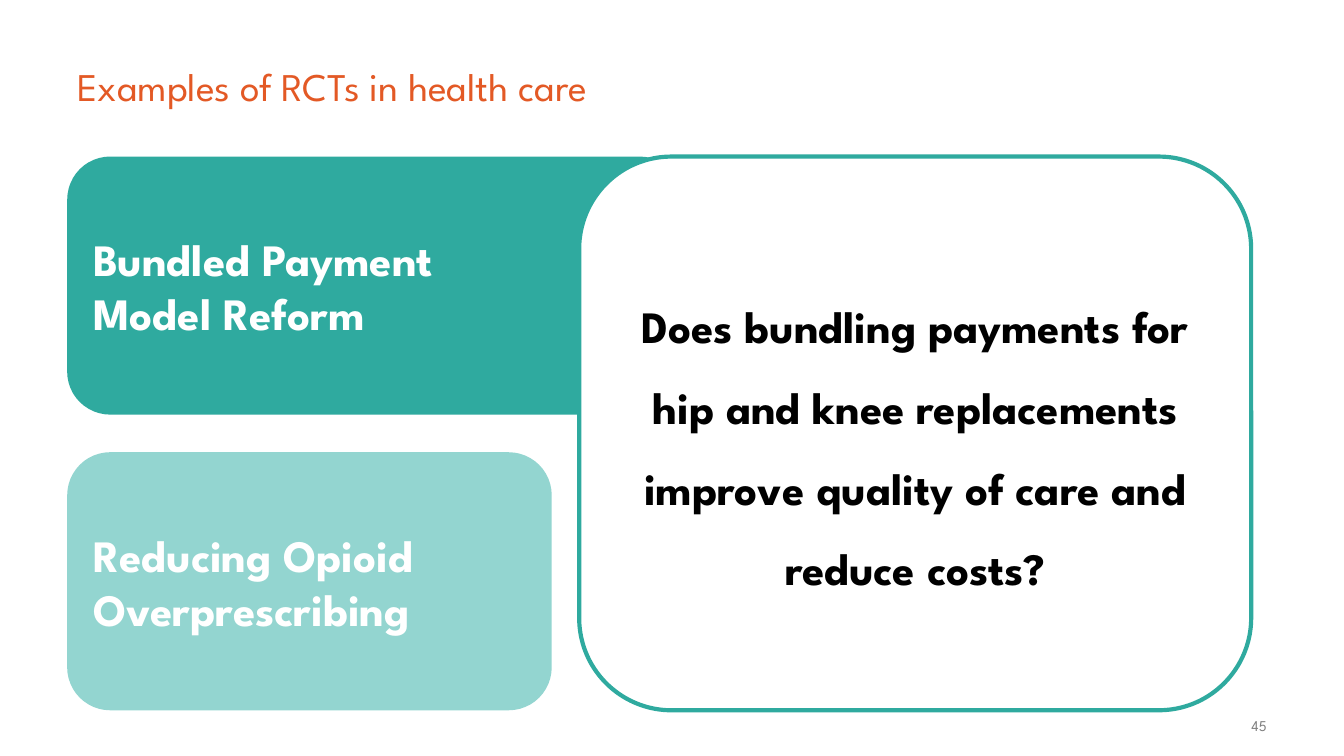
from dataclasses import dataclass

from pptx import Presentation
from pptx.dml.color import RGBColor
from pptx.enum.shapes import MSO_SHAPE
from pptx.enum.text import MSO_ANCHOR, PP_ALIGN
from pptx.shapes.base import BaseShape
from pptx.slide import Slide
from pptx.text.text import TextFrame
from pptx.util import Emu, Pt

EMU_PER_PX = 4572
FONT = "League Spartan"
TEAL = "2FAA9F"
PALE_TEAL = "93D5D0"
WHITE = "FFFFFF"
BLACK = "000000"
ORANGE = "E35925"
GRAY = "7F7F7F"

LEFT = 100
CARD_TOP = 233
CARD_HEIGHT = 384
CARD_GAP = 56


@dataclass(frozen=True)
class Card:
    text: str
    left: int
    top: int
    width: int
    height: int
    fill: str
    line: str | None = None
    color: str = WHITE
    align: PP_ALIGN = PP_ALIGN.LEFT
    line_spacing: float = 1.0
    space_before: int = 0


def px(length: int) -> Emu:
    return Emu(length * EMU_PER_PX)


def rgb(color: str) -> RGBColor:
    return RGBColor.from_string(color)


def place(shape: BaseShape, left: int, top: int, width: int, height: int) -> None:
    shape.left, shape.top = px(left), px(top)
    shape.width, shape.height = px(width), px(height)


def write(
    frame: TextFrame,
    text: str,
    *,
    size: int,
    color: str,
    bold: bool = False,
    align: PP_ALIGN = PP_ALIGN.LEFT,
    anchor: MSO_ANCHOR = MSO_ANCHOR.MIDDLE,
    inset_x: int = 20,
    inset_y: int = 20,
    line_spacing: float = 1.0,
    space_before: int = 0,
) -> None:
    frame.text = text
    frame.word_wrap = True
    frame.vertical_anchor = anchor
    frame.margin_left = frame.margin_right = px(inset_x)
    frame.margin_top = frame.margin_bottom = px(inset_y)
    for paragraph in frame.paragraphs:
        paragraph.alignment = align
        paragraph.line_spacing = line_spacing
        paragraph.space_before = Pt(space_before)
        for run in paragraph.runs:
            run.font.name = FONT
            run.font.size = Pt(size)
            run.font.bold = bold
            run.font.color.rgb = rgb(color)


def draw_card(slide: Slide, card: Card) -> None:
    shape = slide.shapes.add_shape(
        MSO_SHAPE.ROUNDED_RECTANGLE,
        px(card.left), px(card.top), px(card.width), px(card.height),
    )
    shape.shadow.inherit = False
    shape.fill.solid()
    shape.fill.fore_color.rgb = rgb(card.fill)
    if card.line:
        shape.line.color.rgb = rgb(card.line)
        shape.line.width = Pt(2.25)
    else:
        shape.line.fill.background()
    write(
        shape.text_frame, card.text, size=24, color=card.color, bold=True,
        align=card.align, line_spacing=card.line_spacing,
        space_before=card.space_before,
    )


def main() -> None:
    presentation = Presentation()
    presentation.slide_width, presentation.slide_height = px(2000), px(1125)
    slide = presentation.slides.add_slide(presentation.slide_layouts[5])

    title = slide.shapes.title
    place(title, LEFT, 33, 1800, 190)
    write(title.text_frame, "Examples of RCTs in health care",
          size=21, color=ORANGE, inset_x=15, inset_y=8)

    page_number = slide.shapes.add_textbox(px(1714), px(1058), px(186), px(36))
    write(page_number.text_frame, "45", size=8, color=GRAY,
          align=PP_ALIGN.RIGHT, anchor=MSO_ANCHOR.TOP, inset_x=15, inset_y=8)

    cards = [
        Card("Bundled Payment\nModel Reform",
             LEFT, CARD_TOP, 916, CARD_HEIGHT, TEAL),
        Card("Reducing Opioid Overprescribing",
             LEFT, CARD_TOP + CARD_HEIGHT + CARD_GAP, 721, CARD_HEIGHT, PALE_TEAL),
        Card("Does bundling payments for hip and knee replacements "
             "improve quality of care and reduce costs?",
             862, CARD_TOP, 1000, 2 * CARD_HEIGHT + CARD_GAP, WHITE,
             line=TEAL, color=BLACK, align=PP_ALIGN.CENTER,
             line_spacing=1.5, space_before=7),
    ]
    for card in cards:
        draw_card(slide, card)

    presentation.save("out.pptx")


if __name__ == "__main__":
    main()
